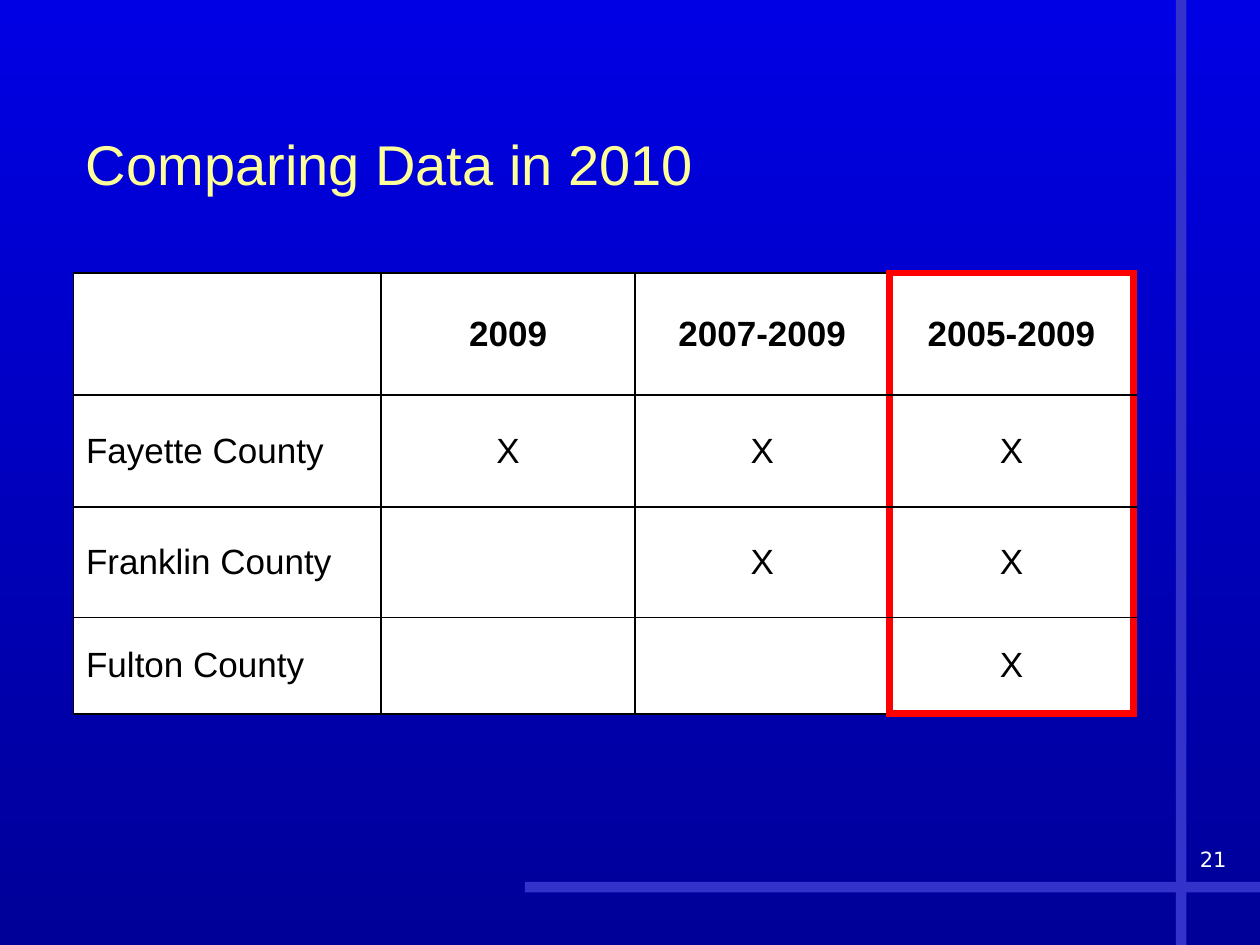
"""Build the slide that compares county data availability in 2010."""
import pptx
import pptx.dml.color
import pptx.enum.shapes
import pptx.enum.text
import pptx.oxml
import pptx.oxml.ns
import pptx.util

COLORS = {
    "sky": "0000E4", "navy": "000099", "bar": "3333CC", "title": "FFFF99",
    "white": "FFFFFF", "black": "000000", "highlight": "FF0000",
}
UNIT = pptx.util.Inches(1) / 12
ALIGN = pptx.enum.text.PP_ALIGN
ANCHOR = pptx.enum.text.MSO_ANCHOR


def write_text(frame, text, size=20, color="black", font="Arial", bold=False, align=ALIGN.LEFT):
    para = frame.paragraphs[0]
    para.alignment = align
    span = para.add_run()
    span.text = text
    span.font.size = pptx.util.Pt(size)
    span.font.name = font
    span.font.bold = bold
    span.font.color.rgb = pptx.dml.color.RGBColor.from_string(COLORS[color])


def draw_border(cell, side, color, points):
    width = pptx.util.Pt(points)
    cell._tc.get_or_add_tcPr().append(pptx.oxml.parse_xml(
        f'<a:{side} {pptx.oxml.ns.nsdecls("a")} w="{width}"><a:solidFill>'
        f'<a:srgbClr val="{COLORS[color]}"/></a:solidFill></a:{side}>'))


deck = pptx.Presentation()
deck.slide_width = round(120 * UNIT)
deck.slide_height = round(90 * UNIT)
page = deck.slides.add_slide(deck.slide_layouts[6])

backdrop = page.background.fill
backdrop.gradient()
backdrop.gradient_angle = 270
for stop, name in zip(backdrop.gradient_stops, ("sky", "navy")):
    stop.color.rgb = pptx.dml.color.RGBColor.from_string(COLORS[name])

for grid in ((50, 84, 70, 1), (112, 0, 1, 90)):
    bar = page.shapes.add_shape(
        pptx.enum.shapes.MSO_SHAPE.RECTANGLE, *(round(n * UNIT) for n in grid))
    bar.shadow.inherit = False
    bar.fill.solid()
    bar.fill.fore_color.rgb = pptx.dml.color.RGBColor.from_string(COLORS["bar"])
    bar.line.fill.background()

labels = (
    ((93, 80, 25, 6), ANCHOR.TOP, "21",
     dict(size=12, color="white", font="DejaVu Sans", align=ALIGN.RIGHT)),
    ((7, 8, 101, 15), ANCHOR.MIDDLE, "Comparing Data in 2010", dict(size=32, color="title")),
)
for grid, anchor, text, style in labels:
    box = page.shapes.add_textbox(*(round(n * UNIT) for n in grid))
    box.text_frame.word_wrap = True
    box.text_frame.vertical_anchor = anchor
    write_text(box.text_frame, text, **style)

rows = (
    ("", "2009", "2007-2009", "2005-2009"),
    ("Fayette County", "X", "X", "X"),
    ("Franklin County", "", "X", "X"),
    ("Fulton County", "", "", "X"),
)
table = page.shapes.add_table(4, 4, *(round(n * UNIT) for n in (7, 26, 101, 42))).table
for column, width in zip(table.columns, (29.3, 24.2, 24.2, 23.3)):
    column.width = round(width * UNIT)
for row, height in zip(table.rows, (11.6, 10.7, 10.5, 9.2)):
    row.height = round(height * UNIT)

for r, texts in enumerate(rows):
    for c, text in enumerate(texts):
        cell = table.cell(r, c)
        cell.vertical_anchor = ANCHOR.MIDDLE
        marked = {
            "lnL": c == 3, "lnR": c >= 2,
            "lnT": c == 3 and r == 0, "lnB": c == 3 and r == 3,
        }
        for side, red in marked.items():
            draw_border(cell, side, "highlight" if red else "black", 4.5 if red else 1)
        cell.fill.solid()
        cell.fill.fore_color.rgb = pptx.dml.color.RGBColor.from_string(COLORS["white"])
        if text:
            write_text(cell.text_frame, text, bold=r == 0,
                       align=ALIGN.CENTER if c else ALIGN.LEFT)

deck.save("out.pptx")
